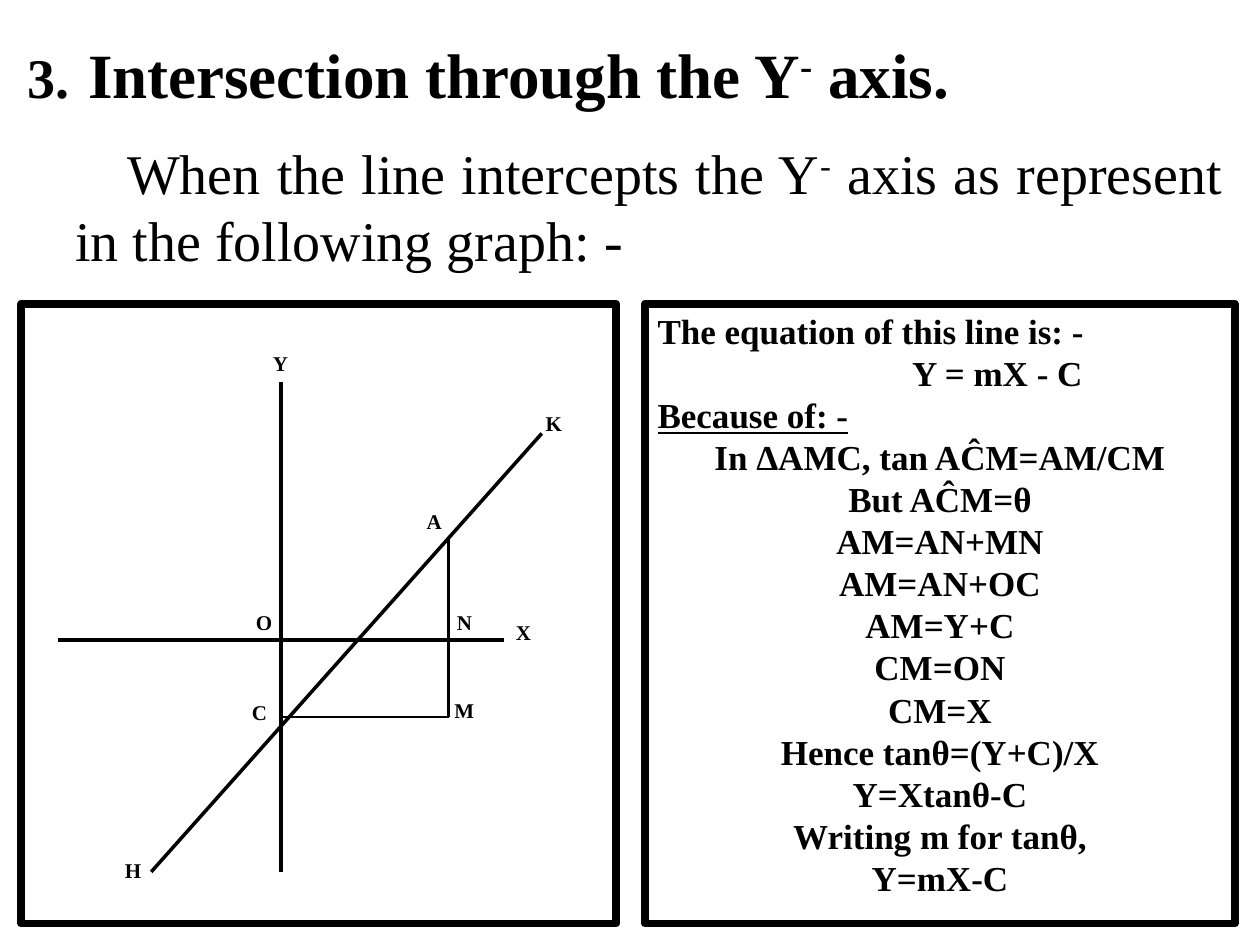
import pptx
import pptx.util
import pptx.dml.color
import pptx.enum.shapes
import pptx.enum.text
import pptx.oxml.ns
from lxml import etree

Inches = pptx.util.Inches
Pt = pptx.util.Pt
ALIGN = pptx.enum.text.PP_ALIGN
COLORS = {"ink": "000000", "paper": "FFFFFF"}


class SlideWriter:
    """Holds the style and the current slide, and draws each kind of element."""

    font_name = "Times New Roman"

    def __init__(self, slide):
        self.slide = slide

    def color(self, name):
        return pptx.dml.color.RGBColor.from_string(COLORS[name])

    def child(self, parent, tag, **attributes):
        return etree.SubElement(parent, pptx.oxml.ns.qn(tag), attributes)

    def paragraph(self, frame, runs, align, left=0, indent=0, number=None, **values):
        first = frame.paragraphs[0]
        paragraph = first if not first.runs else frame.add_paragraph()
        properties = paragraph._p.get_or_add_pPr()
        properties.set("marL", str(Inches(left)))
        properties.set("indent", str(Inches(indent)))
        if number:
            self.child(properties, "a:buSzPct", val="89000")
            self.child(properties, "a:buFont", typeface=self.font_name)
            self.child(properties, "a:buAutoNum", type="arabicPeriod", startAt=str(number))
        for key, value in {"alignment": align, **values}.items():
            setattr(paragraph, key, value)
        for text, style in runs:
            run = paragraph.add_run()
            run.text = text
            style = {"name": self.font_name, **style}
            raised = style.pop("raised", False)
            for key, value in style.items():
                setattr(run.font, key, value)
            run.font.color.rgb = self.color("ink")
            if raised:
                run._r.get_or_add_rPr().set("baseline", "30000")

    def text_box(self, left, top, width, height):
        box = self.slide.shapes.add_textbox(*map(Inches, (left, top, width, height)))
        box.text_frame.word_wrap = True
        return box.text_frame

    def panel(self, left, top, width, height):
        panel = self.slide.shapes.add_shape(
            pptx.enum.shapes.MSO_SHAPE.RECTANGLE, *map(Inches, (left, top, width, height)))
        panel.shadow.inherit = False
        panel.fill.solid()
        panel.fill.fore_color.rgb = self.color("paper")
        panel.line.color.rgb = self.color("ink")
        panel.line.width = Pt(4.5)
        panel.text_frame.word_wrap = True
        panel.text_frame.vertical_anchor = pptx.enum.text.MSO_ANCHOR.TOP
        return panel.text_frame

    def line(self, start, end, weight):
        line = self.slide.shapes.add_connector(
            pptx.enum.shapes.MSO_CONNECTOR.STRAIGHT, *map(Inches, start + end))
        line.line.color.rgb = self.color("ink")
        line.line.width = Pt(weight)
        self.child(line._element.spPr, "a:effectLst")

    def label(self, letter, left, top, width=0.59):
        frame = self.text_box(left, top, width, 0.61)
        self.paragraph(frame, [(letter, {"size": Pt(12), "bold": True})], ALIGN.CENTER)


def main():
    deck = pptx.Presentation()
    deck.slide_width, deck.slide_height = Inches(10), Inches(7.5)
    writer = SlideWriter(deck.slides.add_slide(deck.slide_layouts[6]))

    heading = {"size": Pt(36), "bold": True}
    body = {"size": Pt(32)}
    intro = writer.text_box(0.12, 0.23, 9.68, 2.03)
    writer.paragraph(intro, [
        ("Intersection through the Y", heading),
        ("-", {**heading, "raised": True}),
        (" axis.", heading),
    ], ALIGN.JUSTIFY, 0.48, -0.48, number=3)
    writer.paragraph(intro, [
        ("When the line intercepts the Y", body),
        ("-", {**body, "raised": True}),
        (" axis as represent in the following graph: -", body),
    ], ALIGN.JUSTIFY, 0.38, 0.41, space_before=Pt(16))

    writer.panel(0.17, 2.41, 4.72, 4.92)
    origin_x, point_x, base_y = 2.23, 3.56, 5.69
    for start, end, weight in [
        ((origin_x, 3.03), (origin_x, 6.92), 2),
        ((0.46, 5.08), (4, 5.08), 2),
        ((4.3, 3.44), (1.2, 6.92), 2),
        ((point_x, 4.26), (point_x, base_y), 1.5),
        ((origin_x, base_y), (point_x, base_y), 1.5),
    ]:
        writer.line(start, end, weight)
    for label in [
        ("Y", 1.93, 2.73), ("X", 3.86, 4.87), ("K", 4.1, 3.21),
        ("H", 0.76, 6.76), ("C", 1.79, 5.5, 0.54), ("A", 3.15, 3.99),
        ("M", 3.39, 5.49), ("O", 1.85, 4.79, 0.49), ("N", 3.39, 4.79),
    ]:
        writer.label(*label)

    proof = writer.panel(5.12, 2.41, 4.68, 4.92)
    strong = {"size": Pt(20), "bold": True}
    writer.paragraph(proof, [("The equation of this line is: -", strong)], ALIGN.LEFT)
    writer.paragraph(proof, [("Y = mX - C", strong)], ALIGN.LEFT, left=2.02)
    writer.paragraph(proof, [("Because of: -", {**strong, "underline": True})], ALIGN.LEFT)
    for step in [
        "In ΔAMC, tan AĈM=AM/CM", "But AĈM=θ", "AM=AN+MN", "AM=AN+OC",
        "AM=Y+C", "CM=ON", "CM=X", "Hence tanθ=(Y+C)/X", "Y=Xtanθ-C",
        "Writing m for tanθ,", "Y=mX-C",
    ]:
        writer.paragraph(proof, [(step, strong)], ALIGN.CENTER)

    deck.save("out.pptx")


if __name__ == "__main__":
    main()
